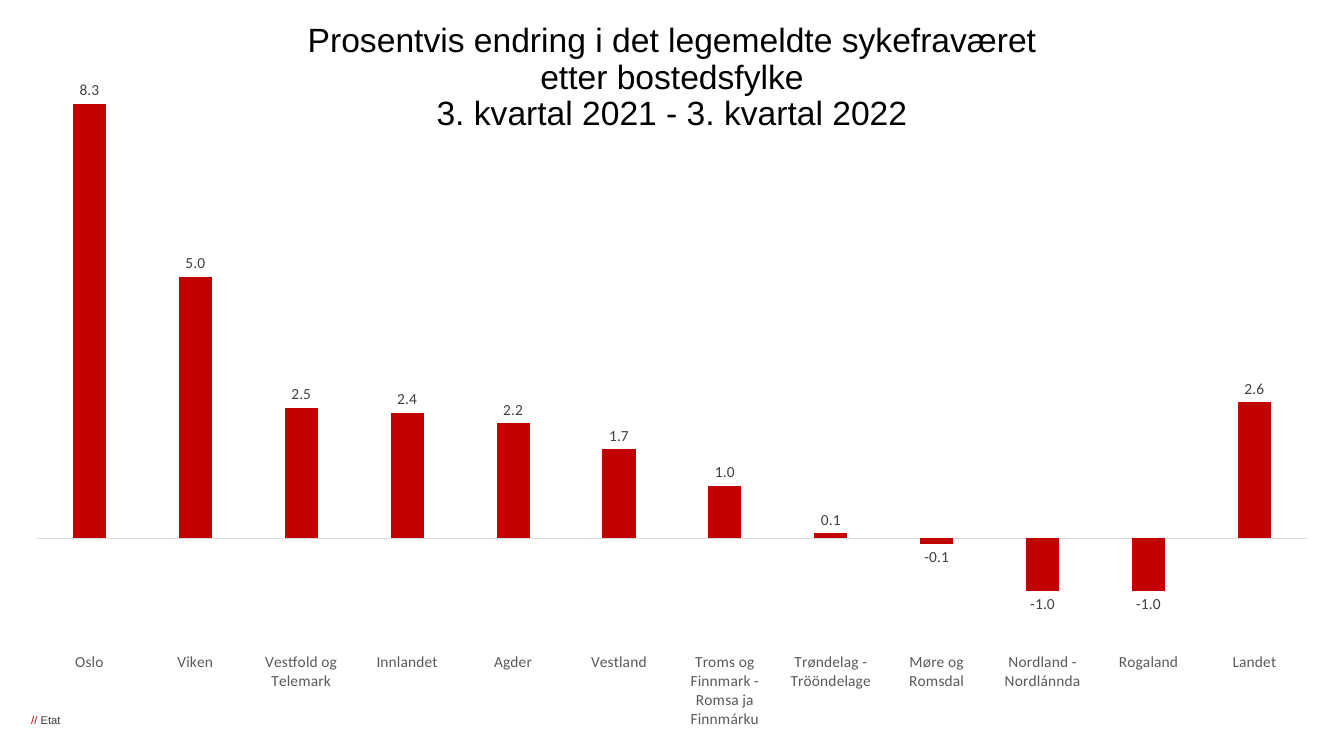
from lxml import etree
from pptx import Presentation
from pptx.chart.data import CategoryChartData
from pptx.dml.color import RGBColor
from pptx.enum.chart import (XL_CHART_TYPE, XL_LABEL_POSITION,
                             XL_TICK_LABEL_POSITION, XL_TICK_MARK)
from pptx.enum.text import MSO_ANCHOR, PP_ALIGN
from pptx.oxml.ns import qn
from pptx.util import Inches, Pt

COLUMNS = XL_CHART_TYPE.COLUMN_CLUSTERED
OUTSIDE_END = XL_LABEL_POSITION.OUTSIDE_END
LOW = XL_TICK_LABEL_POSITION.LOW
NO_TICK = XL_TICK_MARK.NONE

# Content
TITLE = [
    "Prosentvis endring i det legemeldte sykefraværet",
    "etter bostedsfylke",
    "3. kvartal 2021 - 3. kvartal 2022",
]
FOOTER = [("// ", "red"), ("Etat", "dark")]
CHANGES = {
    "Oslo": 8.3,
    "Viken": 5.0,
    "Vestfold og Telemark": 2.5,
    "Innlandet": 2.4,
    "Agder": 2.2,
    "Vestland": 1.7,
    "Troms og Finnmark - Romsa ja Finnmárku": 1.0,
    "Trøndelag - Trööndelage": 0.1,
    "Møre og Romsdal": -0.1,
    "Nordland - Nordlánnda": -1.0,
    "Rogaland": -1.0,
    "Landet": 2.6,
}
COLORS = {
    "red": "C30000", "dark": "3E3832", "black": "000000",
    "axis text": "595959", "axis line": "D9D9D9", "value": "404040",
}
# Plot area as fractions of the chart frame
PLOT = {"x": 0.02, "y": 0.02, "w": 0.96, "h": 0.84}


def color(name):
    return RGBColor.from_string(COLORS[name])


def style(font, name, size, tint):
    font.name, font.size = name, Pt(size)
    font.color.rgb = color(tint)


def add_box(page, left, top, width, height):
    box = page.shapes.add_textbox(Inches(left), Inches(top),
                                  Inches(width), Inches(height))
    return box.text_frame


def place_plot(chart):
    """Fix the inner plot area at the PLOT fractions."""
    area = chart.plots[0]._element.getparent()
    layout = area.find(qn("c:layout"))
    if layout is None:
        layout = etree.Element(qn("c:layout"))
        area.insert(0, layout)
    manual = etree.SubElement(layout, qn("c:manualLayout"))
    settings = [("layoutTarget", "inner"), ("xMode", "edge"), ("yMode", "edge")]
    for tag, value in settings + list(PLOT.items()):
        etree.SubElement(manual, qn("c:" + tag)).set("val", str(value))


deck = Presentation()
deck.slide_width, deck.slide_height = Inches(13.33), Inches(7.5)
page = deck.slides.add_slide(deck.slide_layouts[6])

# Footer
frame = add_box(page, 0.27, 7.08, 0.6, 0.13)
frame.margin_left = Inches(0.04)
frame.margin_right = frame.margin_top = frame.margin_bottom = 0
para = frame.paragraphs[0]
for text, tint in FOOTER:
    span = para.add_run()
    span.text = text
    style(span.font, "Arial", 8, tint)

# Title
frame = add_box(page, 2.08, 0.18, 9.17, 1.19)
frame.word_wrap = True
frame.vertical_anchor = MSO_ANCHOR.MIDDLE
para = frame.paragraphs[0]
para.text = "\v".join(TITLE)
para.alignment = PP_ALIGN.CENTER
para.line_spacing = 0.9
style(para.font, "Arial", 24, "black")

# Column chart
data = CategoryChartData(number_format="0.0")
data.categories = list(CHANGES)
data.add_series("Endring i prosent", list(CHANGES.values()))
chart = page.shapes.add_chart(COLUMNS, Inches(0.1), Inches(0), Inches(13.13),
                              Inches(7.42), data).chart
chart.has_title = chart.has_legend = False
style(chart.font, "Calibri", 11, "black")
place_plot(chart)

# Columns and their values
plot = chart.plots[0]
plot.gap_width, plot.overlap = 219, -27
plot.vary_by_categories = False
series = plot.series[0]
series.invert_if_negative = False
series.format.fill.solid()
series.format.fill.fore_color.rgb = color("red")
labels = series.data_labels
labels.show_value = True
labels.position = OUTSIDE_END
labels.number_format, labels.number_format_is_linked = "0.0", False
style(labels.font, "Calibri", 11, "value")

# Axes
counties = chart.category_axis
counties.tick_label_position = LOW
counties.major_tick_mark = counties.minor_tick_mark = NO_TICK
counties.format.line.color.rgb = color("axis line")
counties.format.line.width = Pt(0.75)
style(counties.tick_labels.font, "Calibri", 11, "axis text")
percent = chart.value_axis
percent.minimum_scale, percent.maximum_scale = -2, 10
percent.has_major_gridlines = False
percent.visible = False

deck.save("out.pptx")
